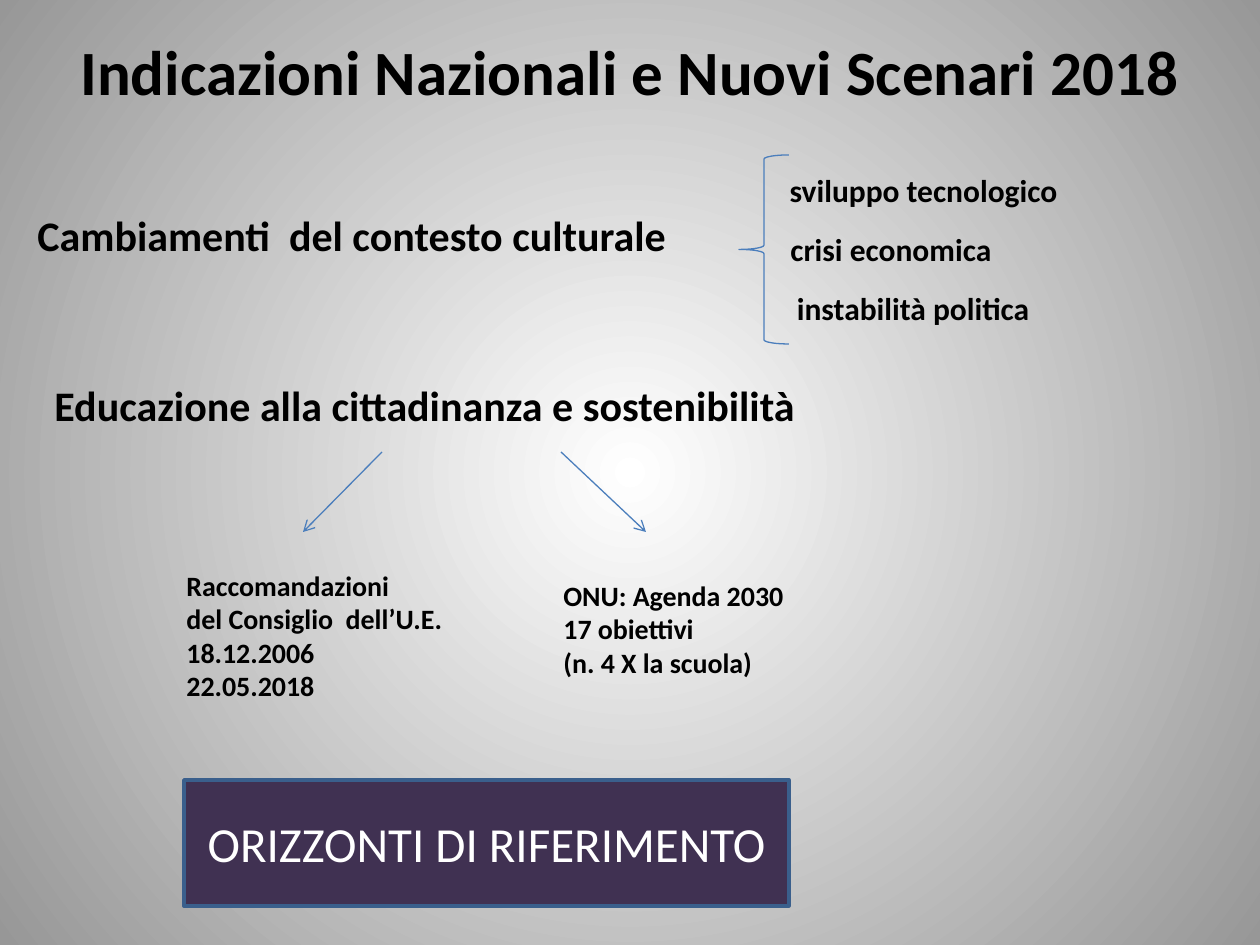
import lxml.etree
import pptx
import pptx.dml.color
import pptx.enum.shapes
import pptx.enum.text
import pptx.oxml.ns
import pptx.util

PX = 914400 / 126
FONT = "Calibri"
COLORS = {
    "text": "000000",
    "light": "FFFFFF",
    "edge": "979797",
    "line": "4B7EBC",
    "box": "403152",
    "border": "3A5F8C",
}
ALIGN = pptx.enum.text.PP_ALIGN
ANCHOR = pptx.enum.text.MSO_ANCHOR
SHAPE = pptx.enum.shapes.MSO_SHAPE


def px(*values):
    return [pptx.util.Emu(round(v * PX)) for v in values]


def rgb(name):
    return pptx.dml.color.RGBColor.from_string(COLORS[name])


def add_xml(parent, tag, attrs):
    return lxml.etree.SubElement(parent, pptx.oxml.ns.qn(tag), attrs)


class SlideBuilder:
    def __init__(self, slide):
        self.slide = slide

    def background(self, inner, outer):
        fill = self.slide.background.fill
        fill.gradient()
        for stop, position, color in zip(fill.gradient_stops, (0, 1), (inner, outer)):
            stop.position = position
            stop.color.rgb = rgb(color)
        # Radial gradient from the centre
        lin = self.slide.element.find(".//" + pptx.oxml.ns.qn("a:lin"))
        grad = lin.getparent()
        grad.remove(lin)
        circle = add_xml(grad, "a:path", {"path": "circle"})
        add_xml(circle, "a:fillToRect", dict.fromkeys("ltrb", "50000"))

    def style_text(self, sp, lines, size, color="text", bold=True, align=ALIGN.LEFT,
                   anchor=ANCHOR.TOP, wrap=True):
        tf = sp.text_frame
        tf.word_wrap = wrap
        tf.vertical_anchor = anchor
        tf.text = "\n".join(lines)
        for p in tf.paragraphs:
            p.alignment = align
            p.font.name = FONT
            p.font.size = pptx.util.Pt(size)
            p.font.bold = bold
            p.font.color.rgb = rgb(color)

    def title(self, text, x, y, w, h, size):
        sp = self.slide.shapes.title
        sp.left, sp.top, sp.width, sp.height = px(x, y, w, h)
        self.style_text(sp, [text], size, align=ALIGN.CENTER, anchor=ANCHOR.MIDDLE)

    def text(self, lines, x, y, w, h, size, **style):
        sp = self.slide.shapes.add_textbox(*px(x, y, w, h))
        self.style_text(sp, lines, size, **style)

    def shape(self, kind, x, y, w, h, line, weight, fill=None):
        sp = self.slide.shapes.add_shape(kind, *px(x, y, w, h))
        sp.shadow.inherit = False
        sp.line.color.rgb = rgb(line)
        sp.line.width = pptx.util.Pt(weight)
        if fill:
            sp.fill.solid()
            sp.fill.fore_color.rgb = rgb(fill)
        else:
            sp.fill.background()
        return sp

    def arrow(self, x1, y1, x2, y2):
        straight = pptx.enum.shapes.MSO_CONNECTOR.STRAIGHT
        cx = self.slide.shapes.add_connector(straight, *px(x1, y1, x2, y2))
        cx.line.color.rgb = rgb("line")
        cx.line.width = pptx.util.Pt(0.75)
        ln = cx.element.find(".//" + pptx.oxml.ns.qn("a:ln"))
        add_xml(ln, "a:tailEnd", {"type": "arrow"})
        add_xml(ln.getparent(), "a:effectLst", {})


def main():
    prs = pptx.Presentation()
    prs.slide_width, prs.slide_height = px(1260, 945)
    s = SlideBuilder(prs.slides.add_slide(prs.slide_layouts[5]))
    s.background("light", "edge")
    s.title("Indicazioni Nazionali e Nuovi Scenari 2018", 63, 26, 1134, 89, 36)

    # Cultural changes and their three causes
    s.text(["Cambiamenti  del contesto culturale"], 25, 203, 700, 63, 24)
    s.shape(SHAPE.LEFT_BRACE, 739, 155, 50, 189, "line", 0.75)
    causes = [
        ("sviluppo tecnologico", 775, 295),
        ("crisi economica", 776, 228),
        ("instabilità politica", 782, 260),
    ]
    for i, (cause, x, w) in enumerate(causes):
        s.text([cause], x, 165 + 59 * i, w, 50, 18, align=ALIGN.RIGHT, wrap=False)

    # Citizenship education and its two sources
    s.text(["Educazione alla cittadinanza e sostenibilità"], 42, 373, 876, 63, 24)
    s.arrow(382, 452, 303, 532)
    s.arrow(561, 452, 646, 532)
    s.text(["Raccomandazioni", "del Consiglio  dell’U.E.", "18.12.2006", "22.05.2018"],
           174, 562, 318, 149, 16)
    s.text(["ONU: Agenda 2030", "17 obiettivi", "(n. 4 X la scuola)"],
           551, 572, 297, 115, 16)

    # Closing banner
    banner = s.shape(SHAPE.RECTANGLE, 184, 780, 605, 126, "border", 2, "box")
    s.style_text(banner, ["ORIZZONTI DI RIFERIMENTO"], 28, color="light", bold=False,
                 align=ALIGN.CENTER, anchor=ANCHOR.MIDDLE)

    prs.save("out.pptx")


if __name__ == "__main__":
    main()
